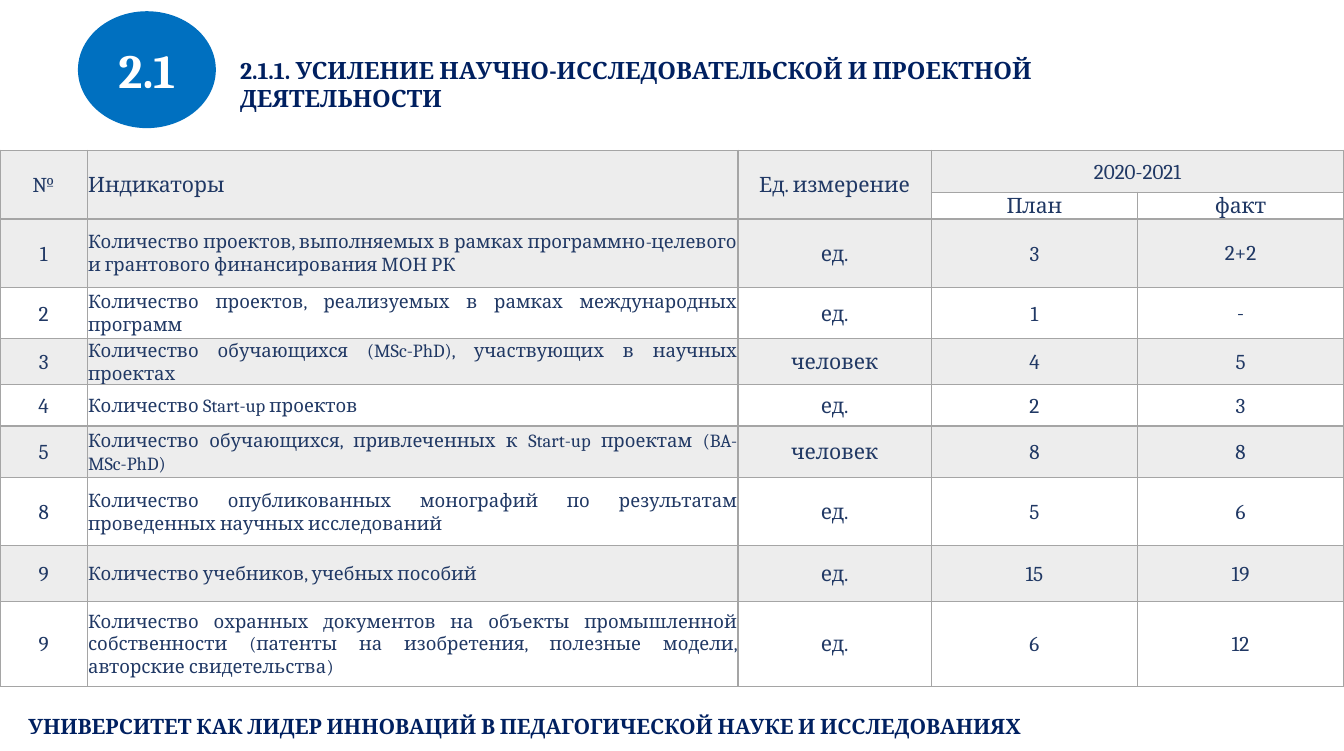
"""Build the slide of research and project indicators for 2020-2021."""
from lxml import etree
from pptx import Presentation
from pptx.dml.color import RGBColor
from pptx.enum import shapes, text
from pptx.oxml import ns
from pptx.util import Cm, Pt

COLOURS = {"navy": "002060", "cell": "203864", "blue": "0070C0",
           "white": "FFFFFF", "band": "EDEDED", "border": "A5A5A5"}
FONT = "Cambria"
SECTION = "2.1"
TITLE = "2.1.1. УСИЛЕНИЕ НАУЧНО-ИССЛЕДОВАТЕЛЬСКОЙ И ПРОЕКТНОЙ ДЕЯТЕЛЬНОСТИ"
MOTTO = "УНИВЕРСИТЕТ КАК ЛИДЕР ИННОВАЦИЙ В ПЕДАГОГИЧЕСКОЙ НАУКЕ И ИССЛЕДОВАНИЯХ"
ROWS = [
    ("№", "Индикаторы", "Ед. измерение", "2020-2021", ""),
    ("", "", "", "План", "факт"),
    ("1", "Количество проектов, выполняемых в рамках программно-целевого и грантового "
          "финансирования МОН РК", "ед.", "3", "2+2"),
    ("2", "Количество проектов, реализуемых в рамках международных программ",
     "ед.", "1", "-"),
    ("3", "Количество обучающихся (MSc-PhD), участвующих в научных проектах",
     "человек", "4", "5"),
    ("4", "Количество Start-up проектов", "ед.", "2", "3"),
    ("5", "Количество обучающихся, привлеченных к Start-up проектам (BA-MSc-PhD)",
     "человек", "8", "8"),
    ("8", "Количество опубликованных монографий по результатам проведенных научных "
          "исследований", "ед.", "5", "6"),
    ("9", "Количество учебников, учебных пособий", "ед.", "15", "19"),
    ("9", "Количество охранных документов на объекты промышленной собственности "
          "(патенты на изобретения, полезные модели, авторские свидетельства)",
     "ед.", "6", "12"),
]
HEADER_ROWS = 2
INDICATOR, FACT = 1, 4
COLUMN_WIDTHS = (2.33, 17.36, 5.16, 5.5, 5.5)
ROW_HEIGHTS = (1.12, 0.71, 1.82, 1.37, 1.1, 1.1, 1.37, 1.82, 1.48, 2.27)
MERGES = [((0, 0), (1, 0)), ((0, 1), (1, 1)), ((0, 2), (1, 2)), ((0, 3), (0, 4))]


def colour(name):
    return RGBColor.from_string(COLOURS[name])


def write(frame, words, size, shade, bold=False, align=text.PP_ALIGN.LEFT):
    frame.word_wrap = True
    frame.text = words
    para = frame.paragraphs[0]
    para.alignment = align
    para.font.name, para.font.size, para.font.bold = FONT, Pt(size), bold
    para.font.color.rgb = colour(shade)
    return para


def add_borders(cell):
    properties = cell._tc.get_or_add_tcPr()
    for side in ("a:lnL", "a:lnR", "a:lnT", "a:lnB"):
        line = etree.SubElement(properties, ns.qn(side), w=str(Pt(1)))
        fill = etree.SubElement(line, ns.qn("a:solidFill"))
        etree.SubElement(fill, ns.qn("a:srgbClr"), val=COLOURS["border"])


def format_cell(cell, words, row, column):
    is_indicator = column == INDICATOR and row >= HEADER_ROWS
    if is_indicator:
        align = text.PP_ALIGN.JUSTIFY
    elif column == INDICATOR:
        align = text.PP_ALIGN.LEFT
    else:
        align = text.PP_ALIGN.CENTER
    para = write(cell.text_frame, words, 14 if is_indicator else 16, "cell", align=align)
    para.line_spacing, para.space_after = 1.07, Pt(8)
    is_fact = column == FACT and row > 0
    cell.margin_left = cell.margin_right = Cm(0.15 if is_fact else 0.02)
    cell.margin_top, cell.margin_bottom = Cm(0 if is_fact else 0.02), 0
    cell.vertical_anchor = text.MSO_ANCHOR.MIDDLE
    add_borders(cell)
    if row % 2 == 0:
        cell.fill.solid()
        cell.fill.fore_color.rgb = colour("band")
    else:
        cell.fill.background()


def add_indicators(page):
    frame = page.shapes.add_table(len(ROWS), len(COLUMN_WIDTHS), 0, Cm(4.01),
                                  Cm(sum(COLUMN_WIDTHS)), Cm(sum(ROW_HEIGHTS)))
    table = frame.table
    for column, width in zip(table.columns, COLUMN_WIDTHS):
        column.width = Cm(width)
    for row, height in zip(table.rows, ROW_HEIGHTS):
        row.height = Cm(height)
    for row, values in enumerate(ROWS):
        for column, words in enumerate(values):
            format_cell(table.cell(row, column), words, row, column)
    for first, last in MERGES:
        table.cell(*first).merge(table.cell(*last))


def add_badge(page):
    badge = page.shapes.add_shape(shapes.MSO_SHAPE.OVAL, Cm(2.08), Cm(0.3),
                                  Cm(3.68), Cm(3.12))
    badge.shadow.inherit = False
    badge.fill.solid()
    badge.fill.fore_color.rgb = colour("blue")
    badge.line.fill.background()
    badge.text_frame.vertical_anchor = text.MSO_ANCHOR.MIDDLE
    write(badge.text_frame, SECTION, 36, "white", True, text.PP_ALIGN.CENTER)


def main():
    deck = Presentation()
    deck.slide_width, deck.slide_height = Cm(35.86), Cm(20.04)
    page = deck.slides.add_slide(deck.slide_layouts[5])

    title = page.shapes.title
    title.left, title.top, title.width, title.height = Cm(6.15), Cm(1.35), Cm(25.5), Cm(1.8)
    title.text_frame.auto_size = text.MSO_AUTO_SIZE.NONE
    title.text_frame.vertical_anchor = text.MSO_ANCHOR.TOP
    write(title.text_frame, TITLE, 18, "navy", True)

    add_indicators(page)
    add_badge(page)
    motto = page.shapes.add_textbox(Cm(0.51), Cm(18.9), Cm(30.94), Cm(0.94))
    write(motto.text_frame, MOTTO, 16, "navy", True)
    deck.save("out.pptx")


if __name__ == "__main__":
    main()
